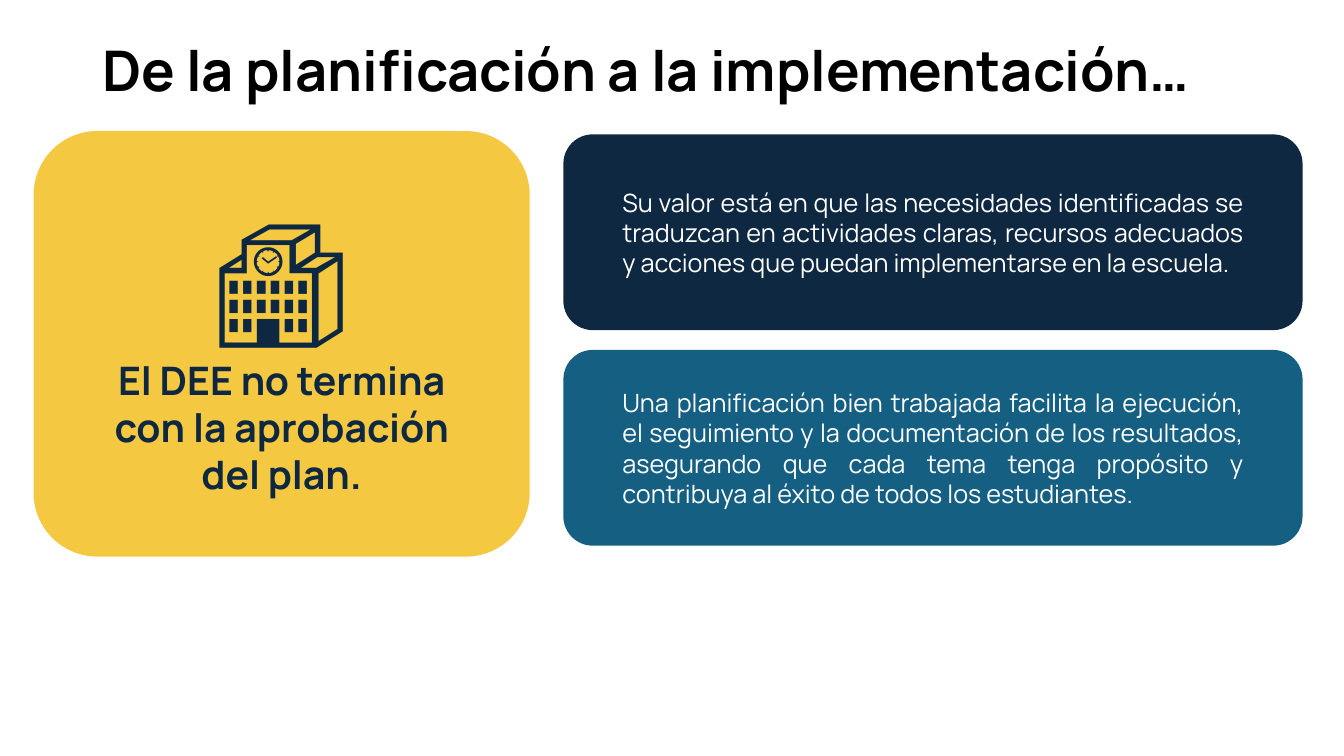
from pptx import Presentation
from pptx.dml.color import RGBColor
from pptx.enum import shapes, text
from pptx.util import Pt

TITLE = "De la planificación a la implementación…"
ICON = "🏫"
CLAIM = "El DEE no termina con la aprobación del plan."
POINTS = [
    ("Su valor está en que las necesidades identificadas se traduzcan en "
     "actividades claras, recursos adecuados y acciones que puedan "
     "implementarse en la escuela.", "navy"),
    ("Una planificación bien trabajada facilita la ejecución, el seguimiento "
     "y la documentación de los resultados, asegurando que cada tema tenga "
     "propósito y contribuya al éxito de todos los estudiantes.", "teal"),
]
THEME = {
    "font": "Manrope",
    "black": "000000", "white": "FFFFFF",
    "gold": "F5C842", "navy": "0E2841", "teal": "156082",
    "title": 40, "icon": 96, "claim": 28, "body": 18,
}
ALIGN = text.PP_ALIGN


def color(name):
    return RGBColor.from_string(THEME[name])


def write(frame, lines, ink, align, bold=False):
    """Fill the frame with (words, size name) lines, one paragraph each."""
    frame.word_wrap = True
    frame.vertical_anchor = text.MSO_ANCHOR.MIDDLE
    frame.text = "\n".join(words for words, _ in lines)
    for para, (_, size) in zip(frame.paragraphs, lines):
        para.alignment = align
        font = para.runs[0].font
        font.name, font.size, font.bold = THEME["font"], Pt(THEME[size]), bold
        font.color.rgb = color(ink)


def card(slide, box, fill, side):
    """Add a rounded card and return its text frame."""
    shape = slide.shapes.add_shape(
        shapes.MSO_SHAPE.ROUNDED_RECTANGLE, *map(Pt, box))
    shape.adjustments[0] = 0.15
    shape.shadow.inherit = False
    shape.fill.solid()
    shape.fill.fore_color.rgb = color(fill)
    shape.line.fill.background()
    frame = shape.text_frame
    frame.margin_left = frame.margin_right = Pt(side)
    frame.margin_top = frame.margin_bottom = Pt(21.6)
    return frame


def main():
    deck = Presentation()
    deck.slide_width, deck.slide_height = Pt(960), Pt(540)
    slide = deck.slides.add_slide(deck.slide_layouts[6])

    head = slide.shapes.add_textbox(Pt(66), Pt(10.8), Pt(864), Pt(82.8))
    write(head.text_frame, [(TITLE, "title")], "black", ALIGN.LEFT, True)
    head.text_frame.paragraphs[0].line_spacing = 0.9

    frame = card(slide, (24, 93.6, 354.4, 304), "gold", 28.8)
    write(frame, [(ICON, "icon"), (CLAIM, "claim")], "navy", ALIGN.CENTER, True)
    frame.paragraphs[1].space_before = Pt(3)

    top, tall, gap = 96, 139.8, 14.2
    for row, (words, fill) in enumerate(POINTS):
        box = (402.4, top + row * (tall + gap), 528, tall)
        write(card(slide, box, fill, 36), [(words, "body")],
              "white", ALIGN.JUSTIFY)

    deck.save("out.pptx")


if __name__ == "__main__":
    main()
